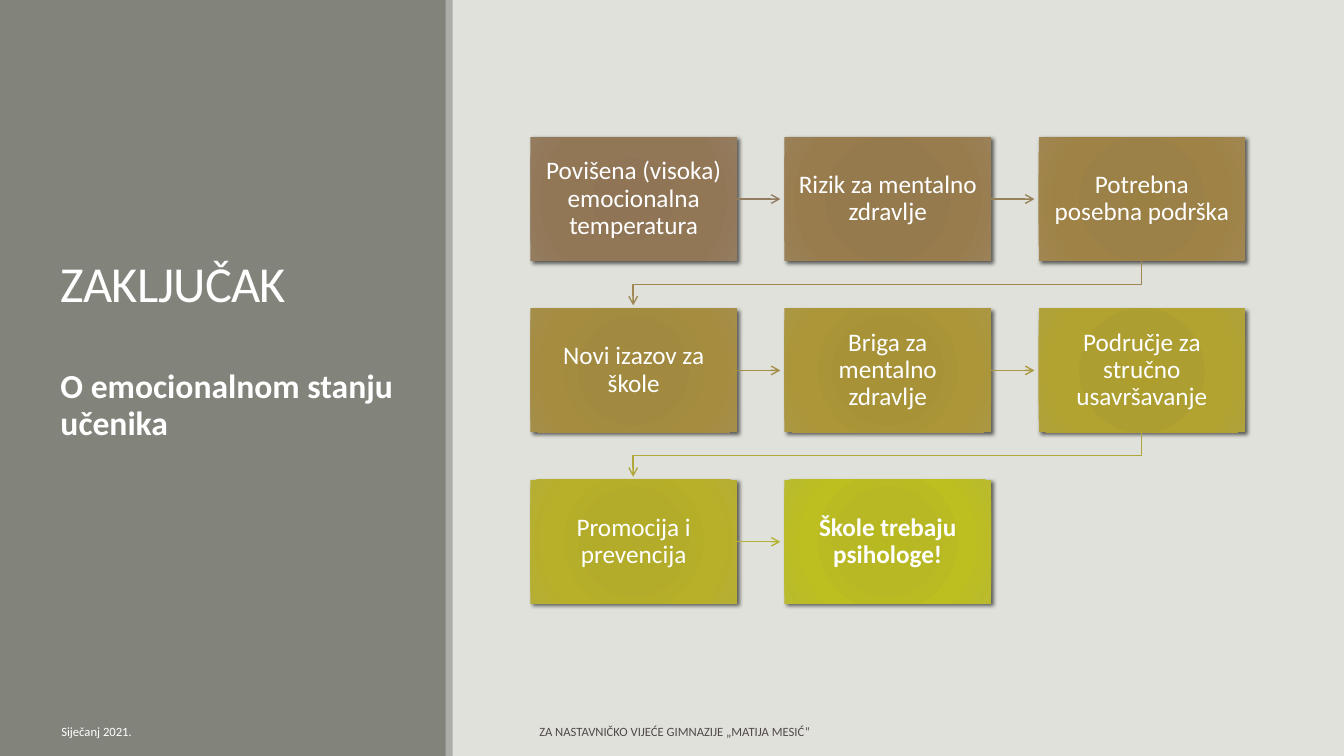
from lxml.etree import SubElement
from pptx import Presentation
from pptx.dml.color import RGBColor
from pptx.enum.shapes import MSO_CONNECTOR, MSO_SHAPE
from pptx.enum.text import MSO_ANCHOR, MSO_AUTO_SIZE, PP_ALIGN
from pptx.oxml import parse_xml
from pptx.oxml.ns import nsdecls, qn
from pptx.util import Pt

PX = 9144  # 100 px to the inch

WHITE = RGBColor(0xFF, 0xFF, 0xFF)
FOOTER_BROWN = RGBColor(0x51, 0x49, 0x49)
BACKGROUND = RGBColor(0xE1, 0xE1, 0xDB)
PANEL_GREY = RGBColor(0x82, 0x84, 0x7C)
STRIPE_GREY = RGBColor(0xAC, 0xAD, 0xA8)

# Flow grid
COLUMNS = 3
GRID_LEFT, GRID_TOP = 526, 136
BOX_WIDTH, BOX_HEIGHT = 205, 123
COLUMN_STEP, ROW_STEP = 252, 170
GRADIENT_POSITIONS = (0, 34, 70, 100)

# Text, gradient colours, colour of the arrow to the next step
STEPS = [
    ("Povišena (visoka) emocionalna temperatura", "8F7454 8F7556 927756 947C5F", "927C61"),
    ("Rizik za mentalno zdravlje", "95794C 957A4E 997C4E 9A8157", "988159"),
    ("Potrebna posebna podrška", "9B8044 9B8047 9F8346 A08650", "9E8752"),
    ("Novi izazov za škole", "A2883D A1893F A68C3E A58E4A", "A3904B"),
    ("Briga za mentalno zdravlje", "A89235 A79238 AC9637 AB9743", "A99A43"),
    ("Područje za stručno usavršavanje", "AE9E2E AD9E31 B2A22F B0A23C", "AFA73C"),
    ("Promocija i prevencija", "B4AC27 B3AB2A B8B028 B5AE35", "B3B435"),
    ("Škole trebaju psihologe!", "B8B920 B7B823 BDBE20 B9BA2F", None),
]


def write_text(shape, text, frame_format, paragraph_format, size, color, bold=False):
    frame = shape.text_frame
    frame.text = text
    frame_values = {"word_wrap": True, "auto_size": MSO_AUTO_SIZE.NONE, **frame_format}
    font_values = {"name": "Calibri", "size": Pt(size), "bold": bold}
    paragraph = frame.paragraphs[0]
    font = paragraph.runs[0].font
    for target, values in ((frame, frame_values), (paragraph, paragraph_format), (font, font_values)):
        for name, value in values.items():
            setattr(target, name, value)
    font.color.rgb = color
    return font


def style_arrow(arrow, color):
    arrow.line.color.rgb = color
    arrow.line.width = Pt(1)
    SubElement(arrow.line._get_or_add_ln(), qn("a:tailEnd"), type="arrow")


presentation = Presentation()
presentation.slide_width = 1333 * PX
presentation.slide_height = 750 * PX
slide = presentation.slides.add_slide(presentation.slide_layouts[2])
slide.background.fill.solid()
slide.background.fill.fore_color.rgb = BACKGROUND
shapes = slide.shapes
title, body = slide.placeholders

# Side panel and stripe, placed behind the placeholders
for order, (left, width, color) in enumerate([(0, 443, PANEL_GREY), (442, 7, STRIPE_GREY)]):
    panel = shapes.add_shape(MSO_SHAPE.RECTANGLE, left * PX, 0, width * PX, 750 * PX)
    panel.shadow.inherit = False
    panel.fill.solid()
    panel.fill.fore_color.rgb = color
    panel.line.fill.background()
    shapes._spTree.insert(2 + order, panel._element)

# Title and subtitle
for placeholder, top, height in ((title, 65, 250), (body, 320, 370)):
    for name, value in {"left": 50, "top": top, "width": 350, "height": height}.items():
        setattr(placeholder, name, value * PX)
title_font = write_text(title, "ZAKLJUČAK", {"vertical_anchor": MSO_ANCHOR.BOTTOM},
                        {"line_spacing": 0.85, "alignment": PP_ALIGN.LEFT}, 36, WHITE)
title_font._element.set("spc", "-50")
write_text(body, "O emocionalnom stanju učenika",
           {"vertical_anchor": MSO_ANCHOR.TOP, "margin_top": 47 * PX},
           {"line_spacing": 0.9, "space_before": Pt(0)}, 24, WHITE, bold=True)

# Step boxes
boxes = []
for index, (text, colors, arrow_color) in enumerate(STEPS):
    row, column = divmod(index, COLUMNS)
    box = shapes.add_shape(
        MSO_SHAPE.RECTANGLE,
        (GRID_LEFT + column * COLUMN_STEP) * PX, (GRID_TOP + row * ROW_STEP) * PX,
        BOX_WIDTH * PX, BOX_HEIGHT * PX)
    box.line.fill.background()
    box.fill.background()
    stops = "".join(
        f'<a:gs pos="{position * 1000}"><a:srgbClr val="{color}"/></a:gs>'
        for position, color in zip(GRADIENT_POSITIONS, colors.split()))
    properties = box._element.spPr
    properties.replace(properties.find(qn("a:noFill")), parse_xml(
        f'<a:gradFill {nsdecls("a")} rotWithShape="1"><a:gsLst>{stops}</a:gsLst>'
        '<a:path path="circle"><a:fillToRect l="100000" t="100000" r="100000" b="100000"/>'
        '</a:path></a:gradFill>'))
    box.shadow.inherit = False
    properties.find(qn("a:effectLst")).append(parse_xml(
        f'<a:outerShdw {nsdecls("a")} blurRad="{Pt(3)}" dist="{Pt(2)}" dir="2700000" '
        'rotWithShape="0"><a:srgbClr val="000000"><a:alpha val="60000"/></a:srgbClr></a:outerShdw>'))
    margins = {f"margin_{side}": 14 * PX for side in ("left", "top", "right", "bottom")}
    write_text(box, text, {"vertical_anchor": MSO_ANCHOR.MIDDLE, **margins},
               {"alignment": PP_ALIGN.CENTER, "line_spacing": 0.9}, 18, WHITE,
               bold=arrow_color is None)
    boxes.append(box)

# Arrows: straight within a row, bent down to the start of the next row
for index, (box, step) in enumerate(zip(boxes[:-1], STEPS)):
    color = RGBColor.from_string(step[2])
    row, column = divmod(index, COLUMNS)
    top = GRID_TOP + row * ROW_STEP
    if column < COLUMNS - 1:
        middle = box.top + box.height // 2
        arrow = shapes.add_connector(
            MSO_CONNECTOR.STRAIGHT, box.left + box.width, middle,
            boxes[index + 1].left - 4 * PX, middle)
        arrow.begin_connect(box, 3)
        SubElement(arrow._element.spPr, qn("a:effectLst"))
    else:
        end_x = GRID_LEFT + BOX_WIDTH // 2
        start_x = end_x + column * COLUMN_STEP
        bottom = top + BOX_HEIGHT
        builder = shapes.build_freeform(start_x, bottom, scale=PX)
        builder.add_line_segments(
            [(start_x, bottom + 23), (end_x, bottom + 23), (end_x, bottom + 44)], close=False)
        arrow = builder.convert_to_shape()
        arrow.fill.background()
        arrow.shadow.inherit = False
    style_arrow(arrow, color)

# Date and footer
for text, left, width, color in [
    ("Siječanj 2021.", 51, 286, WHITE),
    ("ZA NASTAVNIČKO VIJEĆE GIMNAZIJE „MATIJA MESIĆ”", 525, 508, FOOTER_BROWN),
]:
    footer = shapes.add_textbox(left * PX, 706 * PX, width * PX, 40 * PX)
    write_text(footer, text, {"vertical_anchor": MSO_ANCHOR.MIDDLE}, {}, 9, color)

presentation.save("out.pptx")
